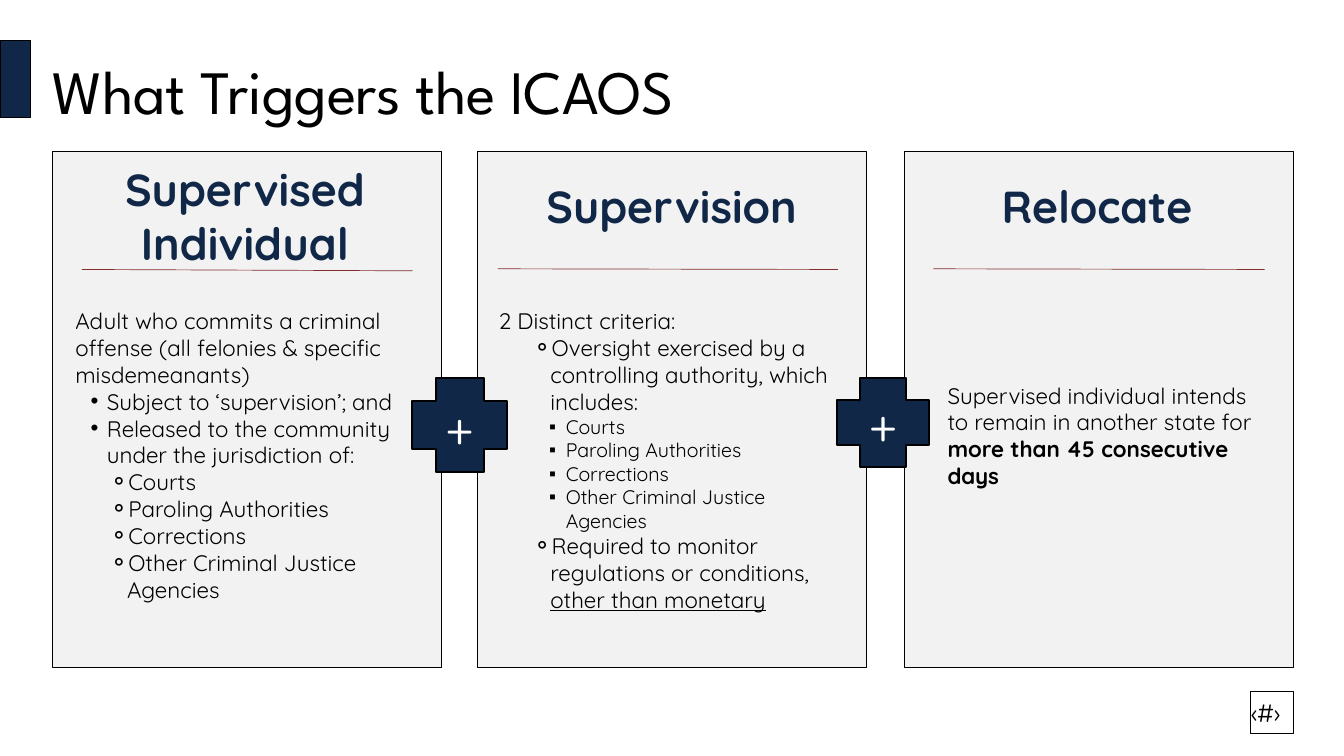
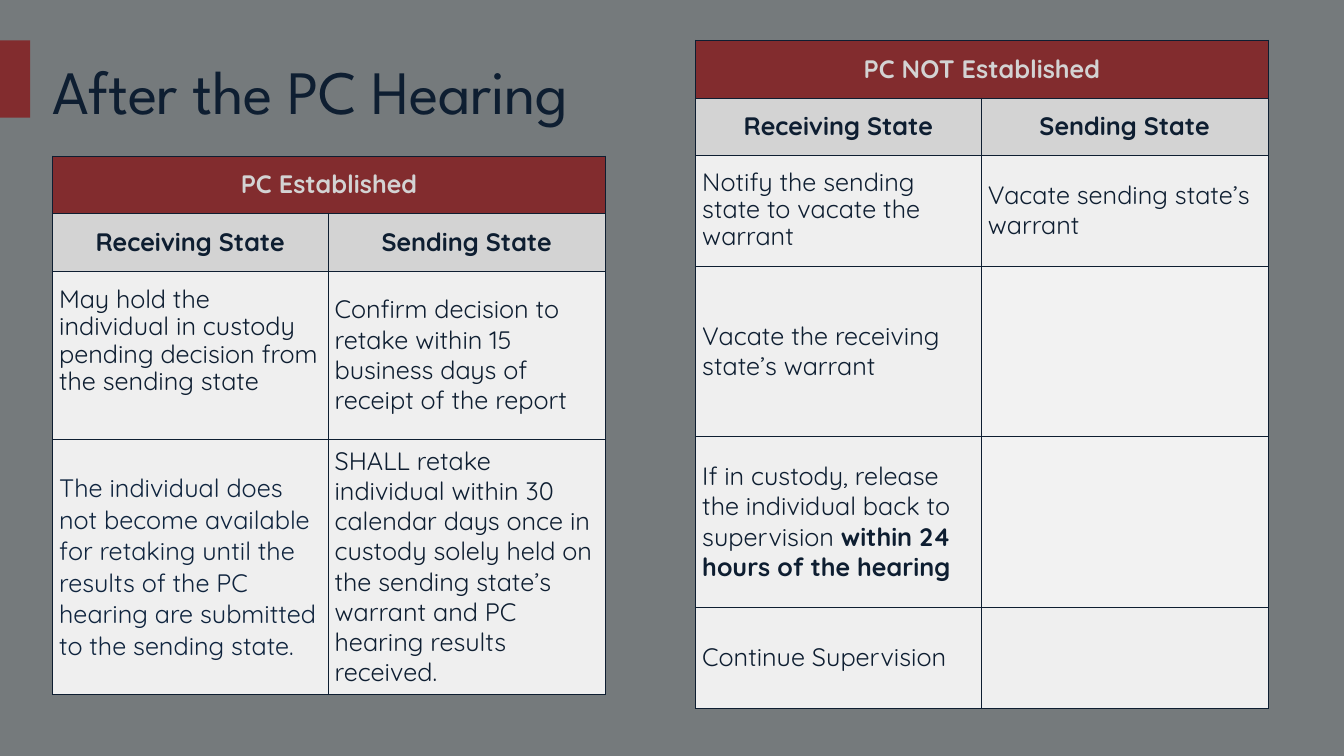
"""Build two slides on what triggers the ICAOS and what follows a PC hearing."""
from lxml import etree
from pptx import Presentation
from pptx.dml.color import RGBColor
from pptx.enum.shapes import MSO_CONNECTOR, MSO_SHAPE
from pptx.enum.text import MSO_ANCHOR, PP_ALIGN
from pptx.oxml.ns import qn
from pptx.util import Emu, Inches, Pt

NAVY, RED, INK, BLACK, WHITE = "102747", "822C2E", "0E1E31", "000000", "FFFFFF"
PANEL, SILVER, PALE = "F2F2F2", "D3D3D3", "EFEFEF"
BODY_FONT, TITLE_FONT, BULLET_FONT = "Quicksand", "League Spartan", "Arial"

LEVELS = [
    {"size": 24, "line": 28.8},
    {"size": 24, "line": 28.8, "bullet": "•", "left": 0.47, "hang": 0.24},
    {"size": 24, "line": 28.8, "bullet": "⚬", "left": 0.77, "hang": 0.26},
    {"size": 21, "line": 25.2, "bullet": "▪", "left": 1, "hang": 0.25},
]

PANEL_TOP, PANEL_WIDTH, PANEL_HEIGHT = 2.25, 5.79, 7.69
PANELS = [
    {
        "left": 0.78,
        "heading": ["Supervised", "Individual"],
        "heading_box": (0.75, 2.26, PANEL_WIDTH, 1.9),
        "rule": (1.22, 4.01, 6.14, 4.03),
        "body_box": (1.12, 4.57, 4.91, 4.76),
        "body": [
            (0, "Adult who commits a criminal offense (all felonies & specific misdemeanants)"),
            (1, "Subject to ‘supervision’; and"),
            (1, "Released to the community under the jurisdiction of:"),
            (2, "Courts"),
            (2, "Paroling Authorities"),
            (2, "Corrections"),
            (2, "Other Criminal Justice Agencies"),
        ],
    },
    {
        "left": 7.1,
        "heading": ["Supervision"],
        "heading_box": (7.1, 2.51, PANEL_WIDTH, 1.11),
        "rule": (7.41, 4, 12.47, 4.01),
        "body_box": (7.42, 4.57, 5.04, 5.29),
        "body": [
            (0, "2 Distinct criteria:"),
            (2, "Oversight exercised by a controlling authority, which includes:"),
            (3, "Courts"),
            (3, "Paroling Authorities"),
            (3, "Corrections"),
            (3, "Other Criminal Justice Agencies"),
            (2, "Required to monitor regulations or conditions, ", ("underline", "other than monetary")),
        ],
    },
    {
        "left": 13.46,
        "heading": ["Relocate"],
        "heading_box": (13.43, 2.51, PANEL_WIDTH, 1.11),
        "rule": (13.89, 4, 18.82, 4.01),
        "body_box": (14.1, 5.68, 4.72, 1.59),
        "body": [
            (0, "Supervised individual intends to remain in another state for ",
             ("bold", "more than 45 consecutive days")),
        ],
    },
]
PLUSES = [(6.13, 5.62, 1.42, 1.41), (12.46, 5.62, 1.36, 1.33)]
NUMBER_BOX = (18.61, 10.29, 0.64, 0.63)

STATES = ["Receiving State", "Sending State"]
HEADER_HEIGHT = 0.86
CELL_MARGIN = 0.1
HEARING_TABLES = [
    {
        "outcome": "PC Established",
        "at": (0.78, 2.32),
        "columns": [4.1, 4.13],
        "heights": [2.5, 3.74],
        "duties": [
            [("May hold the individual in custody pending decision from the sending state",),
             ("Confirm decision to retake within 15 business days of receipt of the report",)],
            [("The individual does not become available for retaking until the results of the "
              "PC hearing are submitted to the sending state.",),
             ("SHALL retake individual within 30 calendar days once in custody solely held on "
              "the sending state’s warrant and PC hearing results received.",)],
        ],
        "spacing": {(0, 0): 29.2, (1, 0): None},
        "inks": {(1, 0): "0F243E"},
        "fills": {},
        "bottoms": {(0, 0): 0.5},
    },
    {
        "outcome": "PC NOT Established",
        "at": (10.35, 0.6),
        "columns": [4.25, 4.27],
        "heights": [1.64, 2.54, 2.54, 1.5],
        "duties": [
            [("Notify the sending state to vacate the warrant",),
             ("Vacate sending state’s warrant",)],
            [("Vacate the receiving state’s warrant",), ()],
            [("If in custody, release the individual back to supervision ",
              ("bold", "within 24 hours of the hearing")), ()],
            [("Continue Supervision",), ()],
        ],
        "spacing": {(0, 0): 29.1},
        "inks": {},
        "fills": {(1, 1): PANEL, (2, 1): PANEL},
        "bottoms": {},
    },
]


def rgb(color):
    return RGBColor.from_string(color)


def inches(values):
    return [Inches(value) for value in values]


def write(paragraph, parts, size, color, line=None, font=BODY_FONT, bold=False,
          align=PP_ALIGN.LEFT):
    for part in parts:
        emphasis, words = (None, part) if isinstance(part, str) else part
        run = paragraph.add_run()
        run.text = words
        if emphasis:
            setattr(run.font, emphasis, True)
    paragraph.alignment = align
    if line:
        paragraph.line_spacing = Pt(line)
    paragraph.font.name = font
    paragraph.font.size = Pt(size)
    paragraph.font.bold = bold
    paragraph.font.color.rgb = rgb(color)


def indent(paragraph, level, bullet, left, hang):
    paragraph.level = level
    properties = paragraph._p.get_or_add_pPr()
    properties.set("marL", str(Inches(left)))
    properties.set("indent", str(-Inches(hang)))
    etree.SubElement(properties, qn("a:buFont")).set("typeface", BULLET_FONT)
    etree.SubElement(properties, qn("a:buChar")).set("char", bullet)


def open_frame(shape, anchor=MSO_ANCHOR.MIDDLE):
    frame = shape.text_frame
    frame.word_wrap = True
    frame.vertical_anchor = anchor
    frame.margin_left = frame.margin_right = frame.margin_top = frame.margin_bottom = 0
    return frame


def paragraphs(frame, count):
    return [frame.paragraphs[0]] + [frame.add_paragraph() for _ in range(count - 1)]


def add_block(slide, kind, box, fill=None, line=None, width=1):
    block = slide.shapes.add_shape(kind, *inches(box))
    block.shadow.inherit = False
    if fill:
        block.fill.solid()
        block.fill.fore_color.rgb = rgb(fill)
    else:
        block.fill.background()
    if line:
        block.line.color.rgb = rgb(line)
        block.line.width = Pt(width)
    else:
        block.line.fill.background()
    return block


def add_rule(slide, ends):
    rule = slide.shapes.add_connector(MSO_CONNECTOR.STRAIGHT, *inches(ends))
    rule.line.color.rgb = rgb(RED)
    rule.line.width = Pt(0.75)
    etree.SubElement(rule._element.spPr, qn("a:effectLst"))


def start_slide(deck, background, title, ink, accent, accent_line=None):
    slide = deck.slides.add_slide(deck.slide_layouts[6])
    slide.background.fill.solid()
    slide.background.fill.fore_color.rgb = rgb(background)
    title_box = slide.shapes.add_textbox(*inches((0.78, 0.65, 18.47, 1.48)))
    heading = open_frame(title_box).paragraphs[0]
    write(heading, [title], 66, ink, 71.3, TITLE_FONT)
    heading.runs[0]._r.get_or_add_rPr().set("spc", "-40")
    add_block(slide, MSO_SHAPE.RECTANGLE, (0, 0.6, 0.45, 1.15), accent, accent_line)
    return slide


def add_panel(slide, panel):
    box = (panel["left"], PANEL_TOP, PANEL_WIDTH, PANEL_HEIGHT)
    add_block(slide, MSO_SHAPE.RECTANGLE, box, PANEL, BLACK)
    add_rule(slide, panel["rule"])
    heading = open_frame(slide.shapes.add_textbox(*inches(panel["heading_box"])))
    for paragraph, words in zip(paragraphs(heading, len(panel["heading"])), panel["heading"]):
        write(paragraph, [words], 48, NAVY, 57.6, bold=True, align=PP_ALIGN.CENTER)
    body = open_frame(slide.shapes.add_textbox(*inches(panel["body_box"])), MSO_ANCHOR.TOP)
    for paragraph, (level, *parts) in zip(paragraphs(body, len(panel["body"])), panel["body"]):
        style = LEVELS[level]
        if level:
            indent(paragraph, level, style["bullet"], style["left"], style["hang"])
        write(paragraph, parts, style["size"], BLACK, style["line"])


def add_plus(slide, box):
    plus = add_block(slide, MSO_SHAPE.CROSS, box, NAVY, BLACK, 2.25)
    plus.adjustments[0] = 0.25
    write(open_frame(plus).paragraphs[0], ["+"], 54, WHITE, 64.8, align=PP_ALIGN.CENTER)


def style_cell(cell, fill, bottom=CELL_MARGIN):
    cell.vertical_anchor = MSO_ANCHOR.MIDDLE
    cell.margin_left = cell.margin_right = cell.margin_top = Inches(CELL_MARGIN)
    cell.margin_bottom = Inches(bottom)
    properties = cell._tc.get_or_add_tcPr()
    for side in ("a:lnL", "a:lnR", "a:lnT", "a:lnB"):
        border = etree.SubElement(properties, qn(side), w=str(Pt(1)))
        ink = etree.SubElement(border, qn("a:solidFill"))
        etree.SubElement(ink, qn("a:srgbClr"), val=INK)
    cell.fill.solid()
    cell.fill.fore_color.rgb = rgb(fill)


def add_hearing_table(slide, hearing):
    widths = inches(hearing["columns"])
    heights = inches([HEADER_HEIGHT] * 2 + hearing["heights"])
    table = slide.shapes.add_table(len(heights), len(widths), *inches(hearing["at"]),
                                   Emu(sum(widths)), Emu(sum(heights))).table
    for column, width in zip(table.columns, widths):
        column.width = width
    for row, height in zip(table.rows, heights):
        row.height = height
    for col, state in enumerate(STATES):
        style_cell(table.cell(0, col), RED)
        style_cell(table.cell(1, col), SILVER)
        write(table.cell(1, col).text_frame.paragraphs[0], [state], 27, INK, 32.4,
              bold=True, align=PP_ALIGN.CENTER)
    table.cell(0, 0).merge(table.cell(0, 1))
    write(table.cell(0, 0).text_frame.paragraphs[0], [hearing["outcome"]], 27, SILVER, 32.4,
          bold=True, align=PP_ALIGN.CENTER)
    for row, duties in enumerate(hearing["duties"]):
        for col, parts in enumerate(duties):
            place = (row, col)
            cell = table.cell(row + 2, col)
            style_cell(cell, hearing["fills"].get(place, PALE),
                       hearing["bottoms"].get(place, CELL_MARGIN))
            write(cell.text_frame.paragraphs[0], parts, 27, hearing["inks"].get(place, INK),
                  hearing["spacing"].get(place, 32.4))


def main():
    deck = Presentation()
    deck.slide_width, deck.slide_height = Inches(20), Inches(11.25)

    triggers = start_slide(deck, WHITE, "What Triggers the ICAOS", BLACK, NAVY, BLACK)
    for panel in PANELS:
        add_panel(triggers, panel)
    for box in PLUSES:
        add_plus(triggers, box)
    number = add_block(triggers, MSO_SHAPE.RECTANGLE, NUMBER_BOX, line=BLACK)
    write(open_frame(number).paragraphs[0], ["‹#›"], 27, BLACK, 32.4)

    hearing_slide = start_slide(deck, "757A7C", "After the PC Hearing", INK, RED)
    for hearing in HEARING_TABLES:
        add_hearing_table(hearing_slide, hearing)

    deck.save("out.pptx")


if __name__ == "__main__":
    main()
